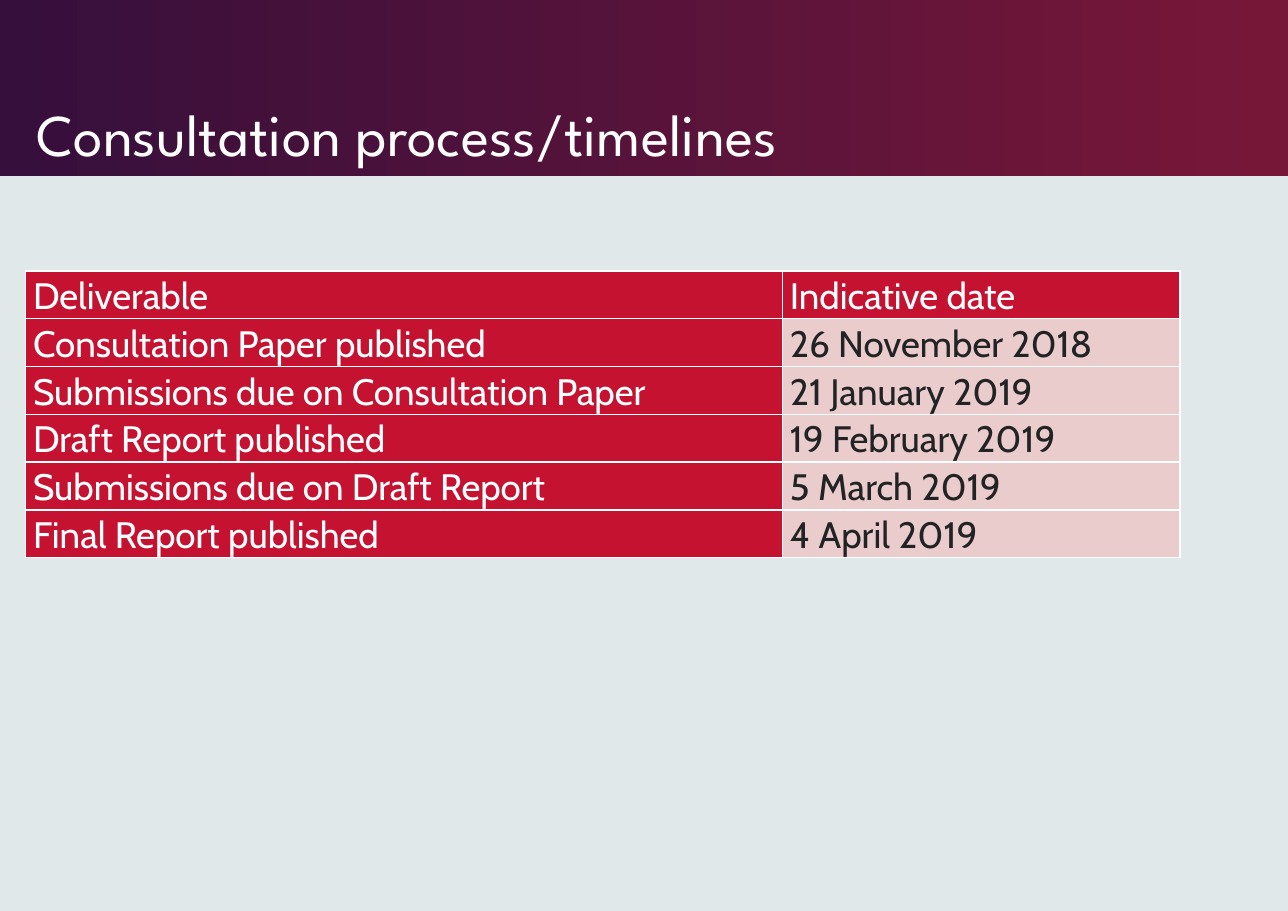
from dataclasses import dataclass

from lxml.etree import SubElement
from pptx import Presentation
from pptx.dml.color import RGBColor
from pptx.enum.shapes import MSO_SHAPE
from pptx.enum.text import MSO_ANCHOR, MSO_AUTO_SIZE, PP_ALIGN
from pptx.oxml.ns import qn
from pptx.util import Inches, Pt


@dataclass(frozen=True)
class Theme:
    background: str = "E0E8EA"
    band_start: str = "360F3C"
    band_end: str = "771738"
    white: str = "FFFFFF"
    dark: str = "222324"
    red: str = "C41230"
    pink: str = "EACCCD"
    title_font: str = "League Spartan"
    body_font: str = "Cabin"
    title_size: float = 38.6
    body_size: float = 24
    border_width: float = 1


class SlideBuilder:
    def __init__(self, slide, theme):
        self.slide = slide
        self.theme = theme
        self.paint(slide.background.fill, theme.background)

    def paint(self, fill, color):
        fill.solid()
        fill.fore_color.rgb = RGBColor.from_string(color)

    def style(self, paragraph, font_name, size, color, line_spacing):
        paragraph.alignment = PP_ALIGN.LEFT
        paragraph.line_spacing = line_spacing
        paragraph.space_before = Pt(0)
        paragraph.font.name = font_name
        paragraph.font.size = Pt(size)
        paragraph.font.color.rgb = RGBColor.from_string(color)

    def band(self, left, top, width, height):
        shape = self.slide.shapes.add_shape(
            MSO_SHAPE.RECTANGLE, Inches(left), Inches(top), Inches(width), Inches(height))
        shape.shadow.inherit = False
        shape.line.fill.background()
        shape.fill.gradient()
        shape.fill.gradient_angle = 0
        colors = (self.theme.band_start, self.theme.band_end)
        for stop, color, position in zip(shape.fill.gradient_stops, colors, (0, 0.99)):
            stop.color.rgb = RGBColor.from_string(color)
            stop.position = position
        # Place the band behind the title
        self.slide.shapes.title.element.addprevious(shape.element)

    def title(self, text, left, top, width, height):
        shape = self.slide.shapes.title
        shape.left, shape.top = Inches(left), Inches(top)
        shape.width, shape.height = Inches(width), Inches(height)
        frame = shape.text_frame
        frame.text = text
        frame.word_wrap = True
        frame.auto_size = MSO_AUTO_SIZE.NONE
        frame.vertical_anchor = MSO_ANCHOR.BOTTOM
        self.style(frame.paragraphs[0], self.theme.title_font,
                   self.theme.title_size, self.theme.white, 0.9)

    def table(self, rows, left, top, column_widths, row_height):
        table = self.slide.shapes.add_table(
            len(rows), len(column_widths), Inches(left), Inches(top),
            Inches(sum(column_widths)), Inches(row_height * len(rows))).table
        table.horz_banding = False
        table.first_row = False
        for column, width in zip(table.columns, column_widths):
            column.width = Inches(width)
        for row_index, row in enumerate(rows):
            for column_index, text in enumerate(row):
                is_header = row_index == 0 or column_index == 0
                self.cell(table.cell(row_index, column_index), text, is_header)

    def cell(self, cell, text, is_header):
        theme = self.theme
        cell.text = text
        cell.margin_left = cell.margin_right = Inches(0.07)
        cell.margin_top = cell.margin_bottom = 0
        self.style(cell.text_frame.paragraphs[0], theme.body_font, theme.body_size,
                   theme.white if is_header else theme.dark, 1.07)
        # Borders come before the fill in the cell properties
        properties = cell._tc.get_or_add_tcPr()
        for side in ("a:lnL", "a:lnR", "a:lnT", "a:lnB"):
            line = SubElement(properties, qn(side), w=str(Pt(theme.border_width)))
            fill = SubElement(line, qn("a:solidFill"))
            SubElement(fill, qn("a:srgbClr"), val=theme.white)
        self.paint(cell.fill, theme.red if is_header else theme.pink)


def main():
    presentation = Presentation()
    presentation.slide_width = Inches(11.69)
    presentation.slide_height = Inches(8.27)
    title_only = presentation.slide_layouts[5]
    builder = SlideBuilder(presentation.slides.add_slide(title_only), Theme())

    # Heading
    builder.band(0, 0, 11.69, 1.6)
    builder.title("Consultation process/timelines", 0.23, 0.16, 8.63, 1.43)

    # Timeline table
    timeline = [
        ("Deliverable", "Indicative date"),
        ("Consultation Paper published", "26 November 2018"),
        ("Submissions due on Consultation Paper", "21 January 2019"),
        ("Draft Report published", "19 February 2019"),
        ("Submissions due on Draft Report", "5 March 2019"),
        ("Final Report published", "4 April 2019"),
    ]
    builder.table(timeline, 0.23, 2.46, (6.87, 3.61), 0.43)

    presentation.save("out.pptx")


if __name__ == "__main__":
    main()
